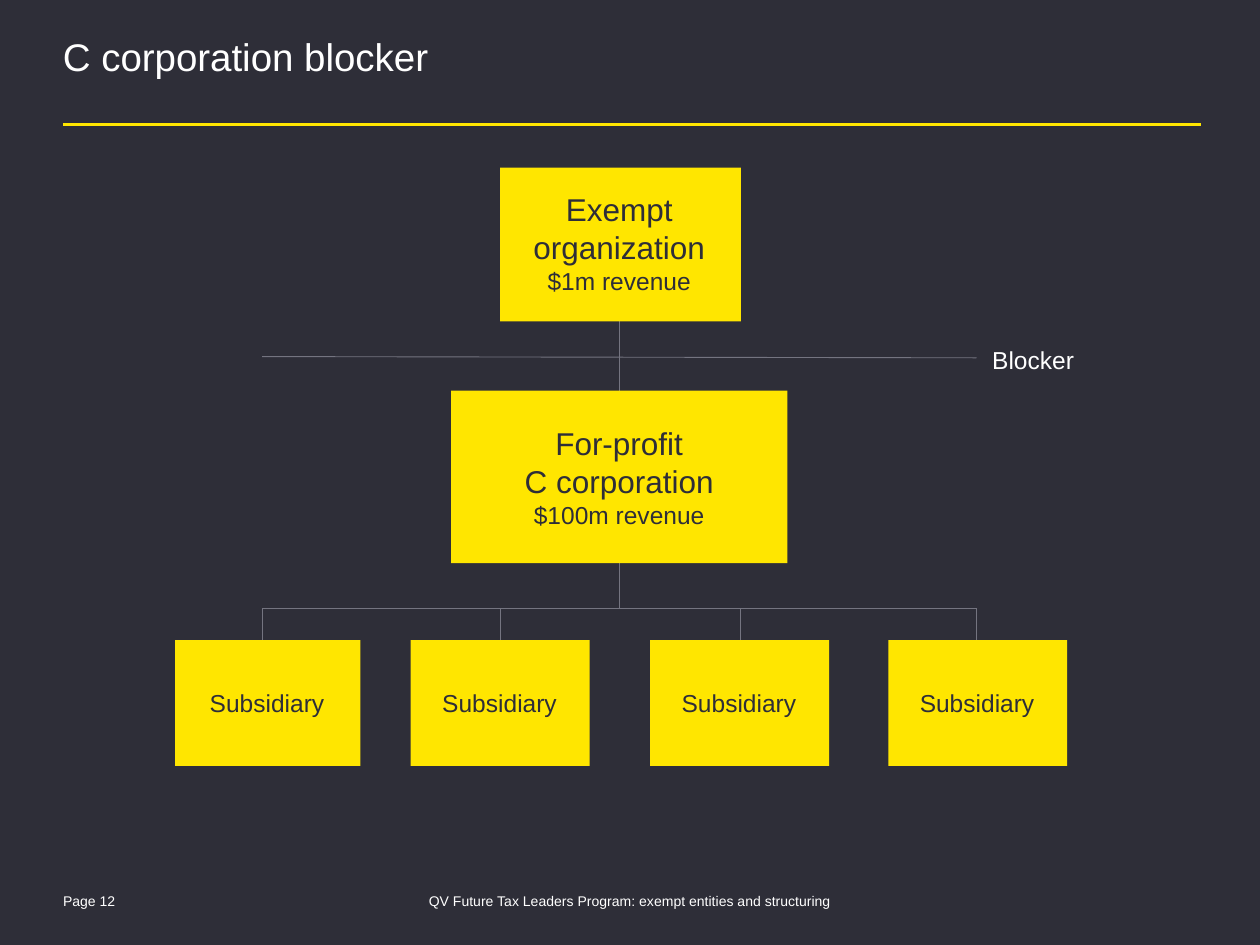
from lxml import etree
from pptx import Presentation
from pptx.dml.color import RGBColor
from pptx.enum.shapes import MSO_CONNECTOR, MSO_SHAPE
from pptx.enum.text import MSO_ANCHOR, PP_ALIGN
from pptx.oxml.ns import qn
from pptx.util import Inches, Pt

STRAIGHT = MSO_CONNECTOR.STRAIGHT
RECTANGLE = MSO_SHAPE.RECTANGLE
LEFT, CENTER = PP_ALIGN.LEFT, PP_ALIGN.CENTER
TOP, MIDDLE = MSO_ANCHOR.TOP, MSO_ANCHOR.MIDDLE
DARK, YELLOW, GRAY, WHITE = "2E2E38", "FFE600", "747480", "FFFFFF"
NO_MARGINS = dict(margin_left=0, margin_right=0, margin_top=0, margin_bottom=0)
FOOTER_MARGINS = {**NO_MARGINS, "margin_top": Inches(0.04)}


def color(hex_value):
    return RGBColor.from_string(hex_value)


def set_attributes(target, values):
    for name, value in values.items():
        setattr(target, name, value)


def write(frame, lines, ink, paragraph_format, frame_format):
    set_attributes(frame, {"word_wrap": True, **frame_format})
    for index, (words, size) in enumerate(lines):
        paragraph = frame.add_paragraph() if index else frame.paragraphs[0]
        paragraph.text = words
        set_attributes(paragraph, paragraph_format)
        for run in paragraph.runs:
            set_attributes(run.font, {"name": "Arial", "size": Pt(size)})
            run.font.color.rgb = color(ink)


def add_label(slide, bounds, lines, ink=DARK, align=CENTER, spacing=1.0,
              after=0, margins=None):
    label = slide.shapes.add_textbox(*map(Inches, bounds))
    paragraph_format = {"alignment": align, "line_spacing": spacing, "space_after": Pt(after)}
    write(label.text_frame, lines, ink, paragraph_format,
          {"vertical_anchor": TOP, **(margins or {})})


def add_entity(slide, bounds, lines=()):
    entity = slide.shapes.add_shape(RECTANGLE, *map(Inches, bounds))
    entity.shadow.inherit = False
    entity.fill.solid()
    entity.fill.fore_color.rgb = color(YELLOW)
    entity.line.fill.background()
    write(entity.text_frame, lines, DARK, {"alignment": CENTER}, {"vertical_anchor": MIDDLE})


def add_line(slide, start, end, ink=GRAY, width=0.5):
    line = slide.shapes.add_connector(STRAIGHT, *map(Inches, (*start, *end)))
    line.line.color.rgb = color(ink)
    line.line.width = Pt(width)
    etree.SubElement(line._element.spPr, qn("a:effectLst"))


def add_frame(slide):
    add_label(slide, (0.5, 7.06, 1.31, 0.15), [("Page 12", 8)], WHITE,
              LEFT, 0.85, 6, FOOTER_MARGINS)
    add_label(slide, (2.79, 7.06, 4.42, 0.15),
              [("QV Future Tax Leaders Program: exempt entities and structuring", 8)],
              WHITE, CENTER, 0.85, 6, FOOTER_MARGINS)
    add_line(slide, (0.5, 0.99), (9.53, 0.99), YELLOW, 1.5)
    add_label(slide, (0.5, 0.32, 9, 0.65), [("C corporation blocker", 22)], WHITE,
              LEFT, 0.85, 0, NO_MARGINS)


def add_links(slide):
    trunk, branches, rail = 4.92, (2.08, 3.97, 5.88, 7.75), 4.83
    first, last = branches[0], branches[-1]
    add_line(slide, (trunk, 3.99), (trunk, rail))
    add_line(slide, (first, rail), (last, rail))
    for branch in branches:
        add_line(slide, (branch, rail), (branch, 5.09))
    add_line(slide, (trunk, 2.41), (trunk, 3.34))
    add_line(slide, (first, 2.83), (last, 2.84))


def add_entities(slide):
    add_entity(slide, (3.97, 1.33, 1.91, 1.22))
    add_label(slide, (4.06, 1.46, 1.71, 0.94),
              [("Exempt organization", 18), ("$1m revenue", 14)])
    add_entity(slide, (3.58, 3.1, 2.67, 1.37),
               [("For-profit\vC corporation", 18), ("$100m revenue", 14)])
    for left, width in ((1.39, 1.47), (3.26, 1.42), (5.16, 1.42), (7.05, 1.42)):
        add_entity(slide, (left, 5.08, width, 1))
        add_label(slide, (left + 0.08, 5.41, width - 0.17, 0.33), [("Subsidiary", 14)])
    add_label(slide, (7.67, 2.69, 1.06, 0.33), [("Blocker", 14)], WHITE)


def main():
    deck = Presentation()
    set_attributes(deck, {"slide_width": Inches(10), "slide_height": Inches(7.5)})
    slide = deck.slides.add_slide(deck.slide_layouts[6])
    slide.background.fill.solid()
    slide.background.fill.fore_color.rgb = color(DARK)
    add_frame(slide)
    add_links(slide)
    add_entities(slide)
    deck.save("out.pptx")


if __name__ == "__main__":
    main()
